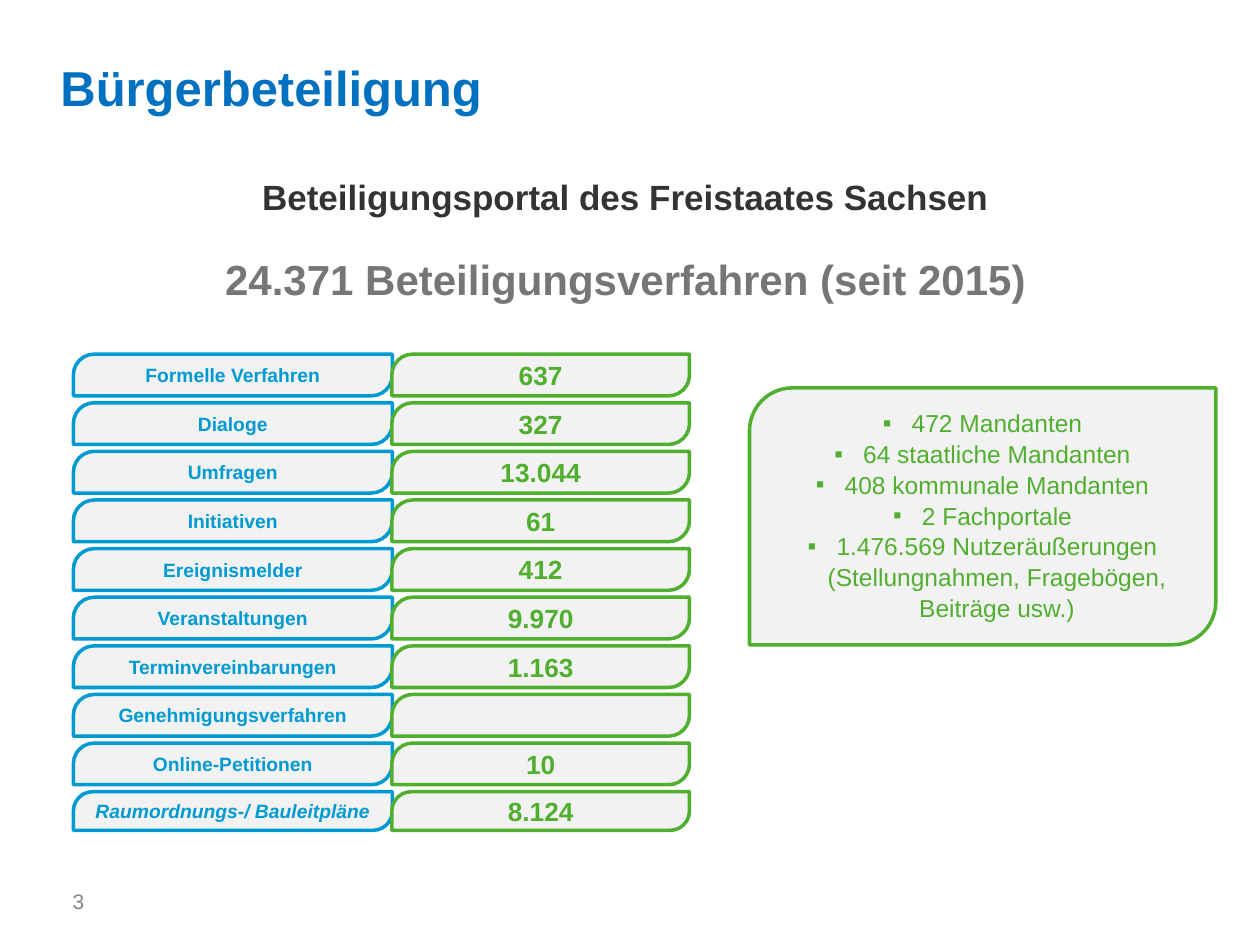
from pptx import Presentation
from pptx.dml.color import RGBColor
from pptx.enum.shapes import MSO_SHAPE
from pptx.enum.text import MSO_ANCHOR, PP_ALIGN
from pptx.oxml.ns import qn
from pptx.util import Cm, Pt
from lxml.etree import SubElement

hues = {"title": "0070C0", "head": "333333", "total": "747678", "page": "828480",
        "blue": "009AD3", "green": "51AF30", "pale": "F2F2F2"}

deck = Presentation()
deck.slide_width, deck.slide_height = Cm(25.4), Cm(19.05)
slide = deck.slides.add_slide(deck.slide_layouts[6])


def write(para, text, size, hue, bold=False, align=PP_ALIGN.CENTER):
    para.text = text
    para.alignment = align
    font = para.font
    font.name, font.size, font.bold = "Arial", Pt(size), bold
    font.color.rgb = RGBColor.from_string(hues[hue])


def add_leaf(left, top, width, height, hue):
    leaf = slide.shapes.add_shape(MSO_SHAPE.ROUND_2_DIAG_RECTANGLE,
                                  Cm(left), Cm(top), Cm(width), Cm(height))
    leaf.shadow.inherit = False
    leaf.fill.solid()
    leaf.fill.fore_color.rgb = RGBColor.from_string(hues["pale"])
    leaf.line.color.rgb = RGBColor.from_string(hues[hue])
    leaf.line.width = Pt(2)
    return leaf


texts = [
    (0, 17.3, 1.7, 1.75, MSO_ANCHOR.MIDDLE, PP_ALIGN.RIGHT,
     [("3", 12, "page", False)]),
    (1.22, 1.22, 18.5, 1.12, MSO_ANCHOR.BOTTOM, PP_ALIGN.LEFT,
     [("Bürgerbeteiligung", 28, "title", True)]),
    (0.71, 3.53, 23.8, 2.6, MSO_ANCHOR.TOP, PP_ALIGN.CENTER,
     [("Beteiligungsportal des Freistaates Sachsen", 20, "head", True),
      ("24.371 Beteiligungsverfahren (seit 2015)", 24, "total", True)]),
]
for left, top, width, height, anchor, align, lines in texts:
    frame = slide.shapes.add_textbox(Cm(left), Cm(top), Cm(width), Cm(height)).text_frame
    frame.word_wrap = True
    frame.vertical_anchor = anchor
    frame.margin_left = frame.margin_right = frame.margin_top = frame.margin_bottom = 0
    for num, (text, size, hue, bold) in enumerate(lines):
        para = frame.add_paragraph() if num else frame.paragraphs[0]
        write(para, text, size, hue, bold, align)
        if num:
            para.space_before = Pt(21)

rows = [("Formelle Verfahren", "637"), ("Dialoge", "327"), ("Umfragen", "13.044"),
        ("Initiativen", "61"), ("Ereignismelder", "412"), ("Veranstaltungen", "9.970"),
        ("Terminvereinbarungen", "1.163"), ("Genehmigungsverfahren", ""),
        ("Online-Petitionen", "10"), ("Raumordnungs-/ Bauleitpläne", "8.124")]
last = len(rows) - 1
for col, (left, width, size, hue) in enumerate([(1.48, 6.43, 11, "blue"),
                                                (7.9, 6, 15, "green")]):
    for num, row in enumerate(rows):
        leaf = add_leaf(left, 7.14 + 0.98 * num, width, 0.78 if num == last else 0.84, hue)
        leaf.adjustments[0] = 0.5
        leaf.text_frame.vertical_anchor = MSO_ANCHOR.MIDDLE
        if row[col]:
            para = leaf.text_frame.paragraphs[0]
            write(para, row[col], size, hue, True)
            if num == last and col == 0:
                para.font.italic = True

facts = ["472 Mandanten", "64 staatliche Mandanten", "408 kommunale Mandanten",
         "2 Fachportale",
         "1.476.569 Nutzeräußerungen\v(Stellungnahmen, Fragebögen, Beiträge usw.)"]
frame = add_leaf(15.11, 7.82, 9.4, 5.18, "green").text_frame
frame.vertical_anchor = MSO_ANCHOR.TOP
for num, fact in enumerate(facts):
    para = frame.add_paragraph() if num else frame.paragraphs[0]
    para.line_spacing = 1.05
    props = para._p.get_or_add_pPr()
    props.set("marL", str(Cm(0.58)))
    props.set("indent", str(-Cm(0.58)))
    SubElement(props, qn("a:buFont"), typeface="Arial")
    SubElement(props, qn("a:buChar"), char="▪")
    write(para, fact, 14, "green")

deck.save("out.pptx")
